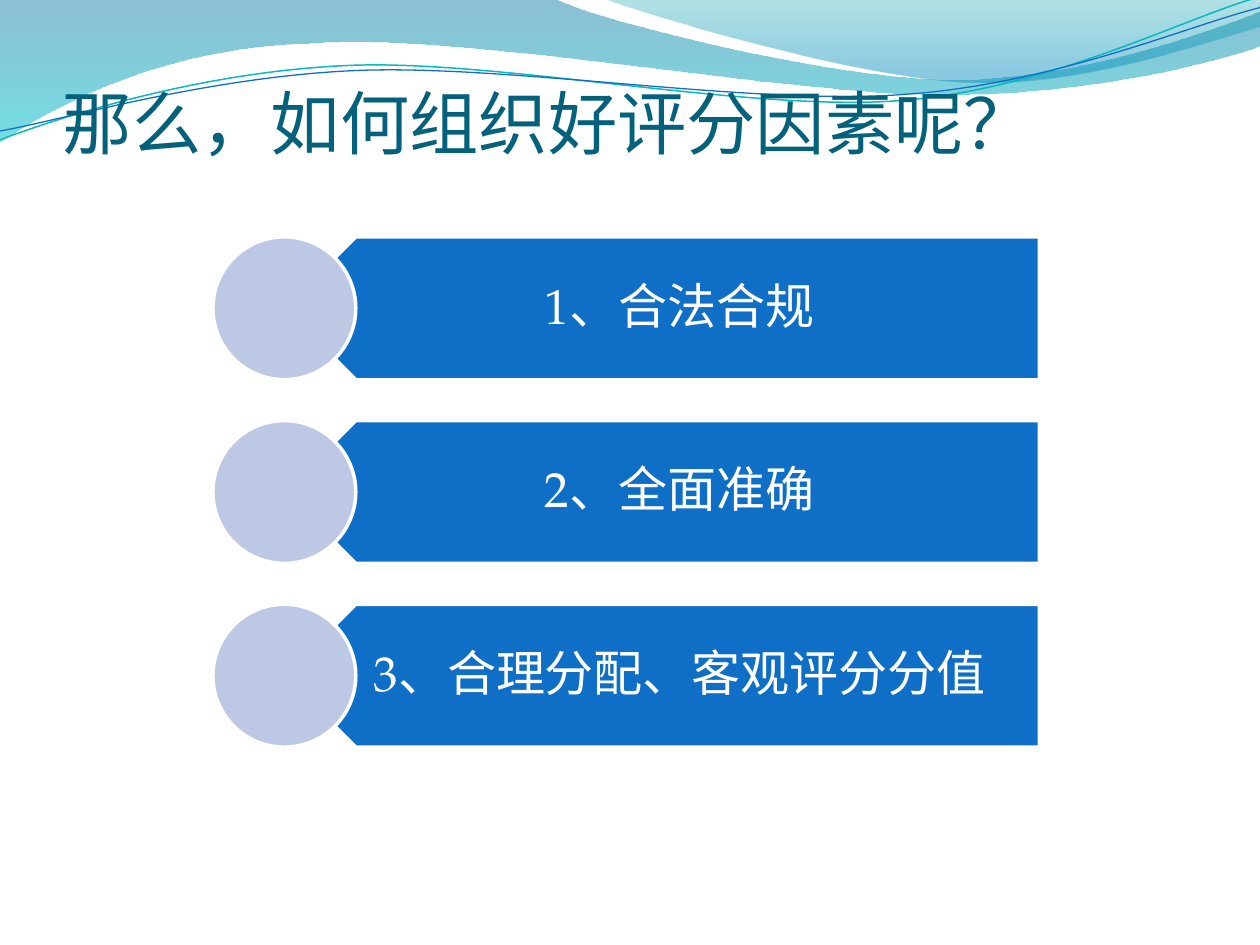
from dataclasses import dataclass

from lxml.etree import SubElement
from pptx import Presentation
from pptx.dml.color import RGBColor
from pptx.enum.shapes import MSO_SHAPE
from pptx.enum.text import MSO_ANCHOR, PP_ALIGN
from pptx.oxml.ns import qn
from pptx.util import Inches, Pt


@dataclass(frozen=True)
class Theme:
    """Colours, fonts and type sizes of the deck."""

    title: str = "04617B"
    bar: str = "0F6FC6"
    disc: str = "BDC8E5"
    light: str = "FFFFFF"
    teal: str = "0AB8BF"
    title_font: str = "Calibri"
    body_font: str = "TeX Gyre Pagella"
    title_size: float = 39.6
    body_size: float = 28
    edge: float = 2


T = Theme()
WIDTH, HEIGHT = 10, 7.5
ROW_SHARE = 0.28
FACTORS = ["1、合法合规", "2、全面准确", "3、合理分配、客观评分分值"]

WAVES = [
    ([[(0, 0)], [(4.4, -0.01)],
      [(4.76, 0.17), (6.64, 0.63), (7.58, 0.63)],
      [(8.53, 0.63), (9.58, 0.26), (10, 0.09)], [(10.01, 0.36)],
      [(9.83, 0.44), (8.7, 0.76), (7.46, 0.75)],
      [(6.22, 0.75), (3.82, 0.28), (2.57, 0.34)],
      [(1.29, 0.36), (0.46, 0.83), (-0.01, 1.13)]],
     [(0, "0074A1", 45), (1, "00C6CF", 55)]),
    ([[(4.79, -0.01)],
      [(5.09, 0.11), (6.82, 0.62), (7.69, 0.65)],
      [(8.56, 0.69), (9.61, 0.32), (10, 0.21)], [(10, 0)]],
     [(0, "00A1A9", 30), (0.8, "008BBF", 45)]),
]
STRANDS = [
    ([[(0, 1.11)],
      [(0.48, 0.93), (1.58, 0.57), (2.77, 0.52)],
      [(3.95, 0.47), (5.93, 0.89), (7.13, 0.8)],
      [(8.33, 0.71), (9.38, 0.15), (9.98, -0.02)]], T.teal, 0.85),
    ([[(0, 1.04)],
      [(0.47, 0.96), (1.64, 0.61), (2.83, 0.56)],
      [(4.03, 0.51), (5.97, 0.84), (7.17, 0.75)],
      [(8.36, 0.67), (9.41, 0.21), (10, 0.06)]], T.bar, 0.75),
]


def rgb(value):
    """Return the colour for a hex value."""
    return RGBColor.from_string(value)


def apply(obj, values):
    """Set each attribute named in a dict of format values."""
    for name, value in values.items():
        setattr(obj, name, value)


def inches(box):
    """Return the lengths of a box in slide units."""
    return [Inches(v) for v in box]


def outline(s, box, segments, close):
    """Draw straight and cubic segments offset by the corner of the box."""
    x, y = box[:2]
    points = [inches((x + px, y + py)) for seg in segments for px, py in seg]
    fb = s.shapes.build_freeform(*points[0])
    fb.add_line_segments(points[1:], close=close)
    sp = fb.convert_to_shape()
    sp.shadow.inherit = False
    steps = iter(list(sp._element.iter(qn("a:lnTo"))))
    for seg in segments[1:]:
        first, *rest = [next(steps) for _ in seg]
        if rest:
            first.tag = qn("a:cubicBezTo")
        for step in rest:
            first.append(step[0])
            step.getparent().remove(step)
    return sp


def banner(s, box):
    """Place the translucent waves and the fine strands over them."""
    for segments, stops in WAVES:
        sp = outline(s, box, segments, True)
        sp.fill.gradient()
        sp.fill.gradient_angle = 270
        for stop, (position, colour, _) in zip(sp.fill.gradient_stops, stops):
            stop.position = position
            stop.color.rgb = rgb(colour)
        for clr, (_, _, alpha) in zip(sp._element.iter(qn("a:srgbClr")), stops):
            SubElement(clr, qn("a:alpha")).set("val", str(alpha * 1000))
        sp.line.fill.background()
    for segments, colour, width in STRANDS:
        sp = outline(s, box, segments, False)
        sp.fill.background()
        sp.line.color.rgb = rgb(colour)
        sp.line.width = Pt(width)


def text(s, box, words, insets, frame, para, font, colour):
    """Place one paragraph of text in the box."""
    tf = s.shapes.add_textbox(*inches(box)).text_frame
    sides = ("margin_left", "margin_top", "margin_right", "margin_bottom")
    apply(tf, {"word_wrap": True, **dict(zip(sides, inches(insets))), **frame})
    p = tf.paragraphs[0]
    apply(p, para)
    r = p.add_run()
    r.text = words
    apply(r.font, font)
    r.font.color.rgb = rgb(colour)


def solid(s, kind, box, colour):
    """Place a filled preset shape with a light edge."""
    sp = s.shapes.add_shape(kind, *inches(box))
    sp.shadow.inherit = False
    sp.fill.solid()
    sp.fill.fore_color.rgb = rgb(colour)
    sp.line.color.rgb = rgb(T.light)
    sp.line.width = Pt(T.edge)
    return sp


def title(s, box):
    """Place the heading above the foot of the box."""
    text(s, box, "那么，如何组织好评分因素呢？", (0, 0.05, 0, 0.42),
         {"vertical_anchor": MSO_ANCHOR.BOTTOM}, {},
         {"name": T.title_font, "size": Pt(T.title_size)}, T.title)


def factor_list(s, box, items):
    """Place one disc and bar per item in equal rows of the box."""
    x, y, w, h = box
    row = h * ROW_SHARE
    pitch = (h - row) / (len(items) - 1)
    for i, words in enumerate(items):
        top = y + i * pitch
        bar = (x + row / 2, top, w - row / 2, row)
        solid(s, MSO_SHAPE.PENTAGON, bar, T.bar).rotation = 180
        text(s, bar, words, (0.5, 0.12, 0.22, 0.12),
             {"vertical_anchor": MSO_ANCHOR.MIDDLE},
             {"alignment": PP_ALIGN.CENTER, "line_spacing": 0.9},
             {"name": T.body_font, "size": Pt(T.body_size)}, T.light)
        solid(s, MSO_SHAPE.OVAL, (x, top, row, row), T.disc)


def main():
    """Build and save the slide."""
    prs = Presentation()
    apply(prs, {"slide_width": Inches(WIDTH), "slide_height": Inches(HEIGHT)})
    s = prs.slides.add_slide(prs.slide_layouts[6])
    banner(s, (0, 0, WIDTH, HEIGHT * 0.15))
    title(s, (WIDTH * 0.05, 0.77, WIDTH * 0.9, 0.95))
    factor_list(s, (1.69, 1.88, 6.56, 4.05), FACTORS)
    prs.save("out.pptx")


if __name__ == "__main__":
    main()
